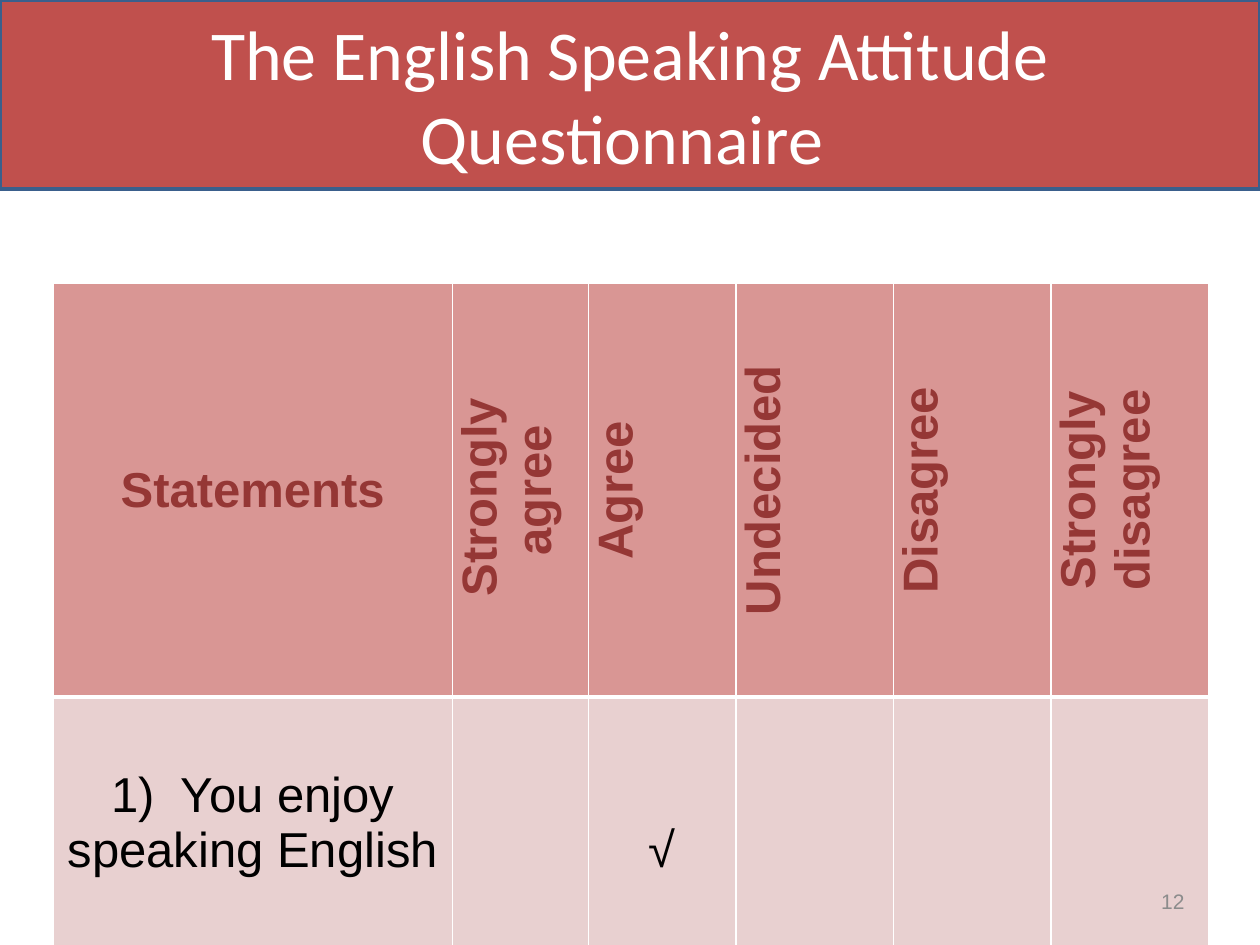
import pptx
import pptx.util
import pptx.dml.color
import pptx.enum.shapes
import pptx.enum.text
import pptx.oxml
import pptx.oxml.ns

Inches = pptx.util.Inches
Pt = pptx.util.Pt
RGBColor = pptx.dml.color.RGBColor
ALIGN = pptx.enum.text.PP_ALIGN
MIDDLE = pptx.enum.text.MSO_ANCHOR.MIDDLE

WHITE = RGBColor(0xFF, 0xFF, 0xFF)
BLACK = RGBColor(0, 0, 0)
GRAY = RGBColor(0x8C, 0x8C, 0x8C)
BRICK = RGBColor(0xC0, 0x50, 0x4D)
NAVY = RGBColor(0x3A, 0x5F, 0x8C)
MAROON = RGBColor(0x95, 0x37, 0x35)
ROSE = RGBColor(0xD9, 0x96, 0x94)
BLUSH = RGBColor(0xE8, 0xD0, 0xD0)

COLUMN_WIDTHS = [3.17, 1.08, 1.17, 1.25, 1.25, 1.25]
ROW_HEIGHTS = [2.59, 2]
# Each heading is a list of paragraphs.
HEADINGS = [["Statements"], ["Strongly ", "agree"], ["Agree"], ["Undecided"],
            ["Disagree"], ["Strongly disagree"]]
ANSWERS = ["1)  You enjoy speaking English", "", "√", "", "", ""]


def write(frame, paragraphs, size, color, font="Arial", bold=False, align=ALIGN.CENTER):
    for index, text in enumerate(paragraphs):
        paragraph = frame.add_paragraph() if index else frame.paragraphs[0]
        paragraph.alignment = align
        run = paragraph.add_run()
        run.text = text
        run.font.size = Pt(size)
        run.font.name = font
        run.font.bold = bold
        run.font.color.rgb = color


def style_cell(cell, fill, top, bottom):
    """Fill and pad a cell; top and bottom are border widths in points."""
    cell.fill.solid()
    cell.fill.fore_color.rgb = fill
    cell.vertical_anchor = MIDDLE
    cell.margin_left = cell.margin_right = Inches(0.07)
    cell.margin_top = cell.margin_bottom = 0
    properties = cell._tc.get_or_add_tcPr()
    borders = {"L": 1, "R": 1, "T": top, "B": bottom}
    for index, (side, width) in enumerate(borders.items()):
        properties.insert(index, pptx.oxml.parse_xml(
            f'<a:ln{side} {pptx.oxml.ns.nsdecls("a")} w="{Pt(width)}">'
            f'<a:solidFill><a:srgbClr val="{WHITE}"/></a:solidFill></a:ln{side}>'))


def add_questionnaire(slide, left, top, width, height):
    table = slide.shapes.add_table(len(ROW_HEIGHTS), len(COLUMN_WIDTHS),
                                   left, top, width, height).table
    for column, column_width in zip(table.columns, COLUMN_WIDTHS):
        column.width = Inches(column_width)
    for row, row_height in zip(table.rows, ROW_HEIGHTS):
        row.height = Inches(row_height)

    for index, (heading, answer) in enumerate(zip(HEADINGS, ANSWERS)):
        heading_cell, answer_cell = table.cell(0, index), table.cell(1, index)
        style_cell(heading_cell, ROSE, top=1, bottom=3)
        style_cell(answer_cell, BLUSH, top=3, bottom=1)
        write(heading_cell.text_frame, heading, 28, MAROON, bold=True)
        if index:
            heading_cell._tc.get_or_add_tcPr().set("vert", "vert270")
        if answer:
            write(answer_cell.text_frame, [answer], 28, BLACK)
        if answer == "√":
            answer_cell.text_frame.paragraphs[0].line_spacing = 2.0


def add_slide_number(slide, left, top, width, height):
    frame = slide.shapes.add_textbox(left, top, width, height).text_frame
    frame.word_wrap = True
    frame.vertical_anchor = MIDDLE
    write(frame, ["12"], 12, GRAY, align=ALIGN.RIGHT)


def add_title_band(slide, left, top, width, height):
    band = slide.shapes.add_shape(pptx.enum.shapes.MSO_SHAPE.RECTANGLE,
                                  left, top, width, height)
    band.shadow.inherit = False
    band.fill.solid()
    band.fill.fore_color.rgb = BRICK
    band.line.color.rgb = NAVY
    band.line.width = Pt(2)
    band.text_frame.word_wrap = True
    band.text_frame.vertical_anchor = MIDDLE
    write(band.text_frame, ["The English Speaking Attitude Questionnaire "],
          40, WHITE, font="Calibri")


def main():
    presentation = pptx.Presentation()
    presentation.slide_width = Inches(10)
    presentation.slide_height = Inches(7.5)
    slide = presentation.slides.add_slide(presentation.slide_layouts[6])
    add_questionnaire(slide, Inches(0.42), Inches(2.25), Inches(9.17), Inches(4.59))
    add_slide_number(slide, Inches(7.17), Inches(6.95), Inches(2.33), Inches(0.4))
    add_title_band(slide, 0, 0, presentation.slide_width, Inches(1.5))
    presentation.save("out.pptx")


if __name__ == "__main__":
    main()
